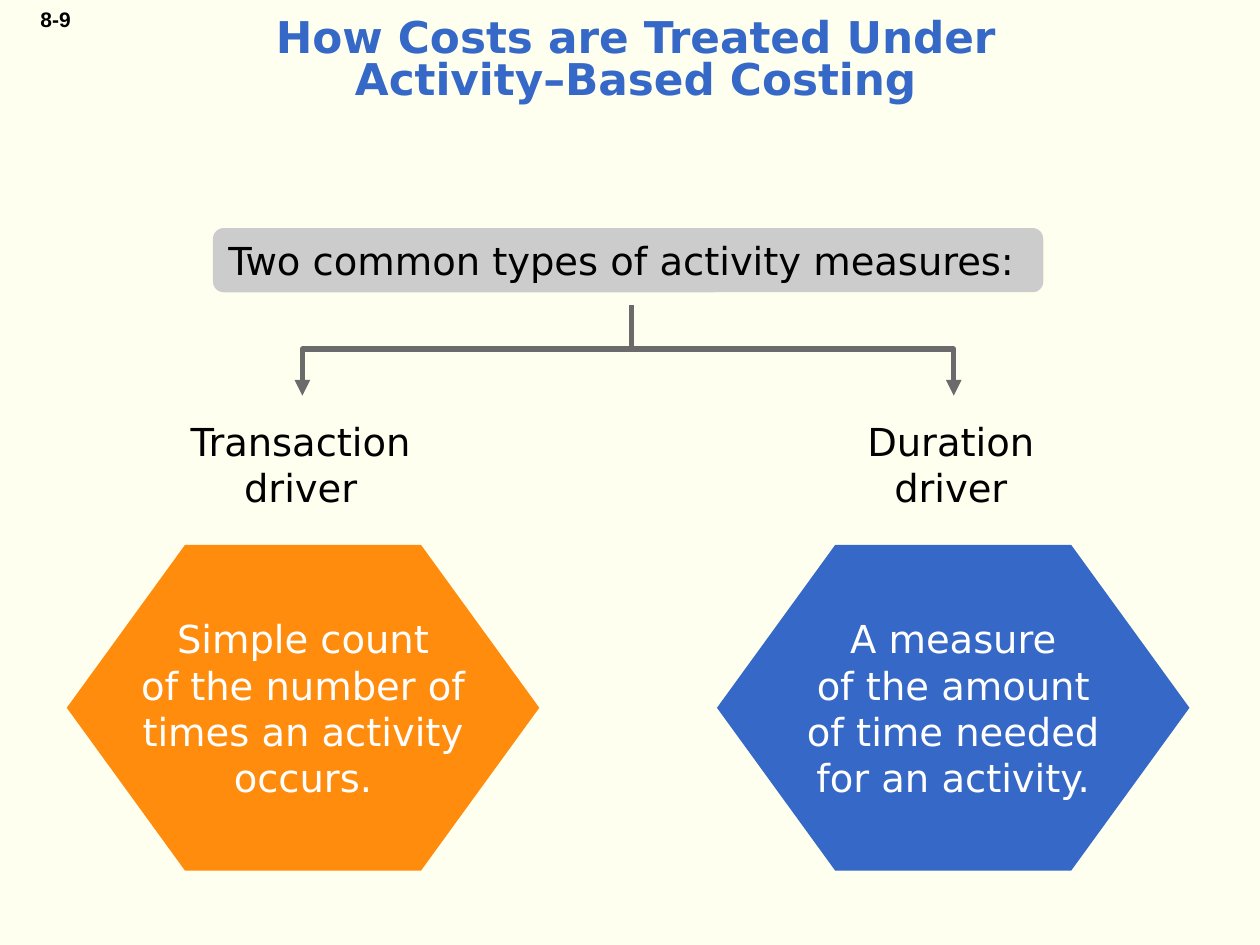
import pptx
import pptx.util
import pptx.dml.color
import pptx.enum.shapes
import pptx.enum.text
import pptx.oxml.ns
import lxml.etree

COLORS = {"page": "FFFFEF", "blue": "3568C7", "orange": "FF8C0D", "banner": "CCCCCC",
          "arrow": "6B6B6B", "ink": "000000", "white": "FFFFFF"}
SHAPE = pptx.enum.shapes.MSO_SHAPE
ALIGN = pptx.enum.text.PP_ALIGN
ANCHOR = pptx.enum.text.MSO_ANCHOR
FIT = pptx.enum.text.MSO_AUTO_SIZE
BODY = {"name": "DejaVu Sans", "size": pptx.util.Pt(22), "bold": False}
TITLE = {"name": "DejaVu Sans", "size": pptx.util.Pt(25), "bold": True}
NUMBER = {"name": "Arial", "size": pptx.util.Pt(12), "bold": True}


def rgb(name):
    """Return the named colour."""
    return pptx.dml.color.RGBColor.from_string(COLORS[name])


def emu(box):
    """Convert a box in inches to slide units."""
    return [pptx.util.Inches(v) for v in box]


def write(sp, text, color, font=BODY, align=ALIGN.CENTER, anchor=ANCHOR.TOP, wrap=False):
    """Write formatted text into a shape."""
    tf = sp.text_frame
    for key, value in {"auto_size": FIT.NONE, "word_wrap": wrap,
                       "vertical_anchor": anchor}.items():
        setattr(tf, key, value)
    p = tf.paragraphs[0]
    p.text, p.alignment = text, align
    for r in p.runs:
        for key, value in font.items():
            setattr(r.font, key, value)
        r.font.color.rgb = rgb(color)
    return p


def panel(shapes, kind, box, fill, adj):
    """Add a flat filled shape."""
    sp = shapes.add_shape(kind, *emu(box))
    sp.shadow.inherit = False
    sp.fill.solid()
    sp.fill.fore_color.rgb = rgb(fill)
    sp.line.fill.background()
    sp.adjustments[0] = adj
    return sp


def heading(s, box):
    """Place the title in its placeholder."""
    sp = s.shapes.title
    for key, value in zip(("left", "top", "width", "height"), emu(box)):
        setattr(sp, key, value)
    p = write(sp, "How Costs are Treated Under\nActivity–Based Costing", "blue",
              TITLE, anchor=ANCHOR.MIDDLE, wrap=True)
    p.line_spacing = 0.8


def page_number(s, box):
    """Place the page number."""
    write(s.shapes.add_textbox(*emu(box)), "8-9", "ink", NUMBER, ALIGN.RIGHT)


def banner(s, box):
    """Place the introductory banner."""
    sp = panel(s.shapes, SHAPE.ROUNDED_RECTANGLE, box, "banner", 0.167)
    write(sp, "Two common types of activity measures:", "ink", align=ALIGN.LEFT)


def driver(s, box, label, detail, fill):
    """Place a driver label above its hexagon."""
    x, y, w, h = box
    shapes = s.shapes.add_group_shape().shapes
    sp = panel(shapes, SHAPE.HEXAGON, (x, y + h * 0.29, w, h * 0.71), fill, 0.363)
    write(sp, detail, "white", anchor=ANCHOR.MIDDLE)
    sp = shapes.add_textbox(*emu((x + w * 0.23, y, w * 0.53, h * 0.23)))
    write(sp, label, "ink")


def branch(shapes, start, end):
    """Draw an elbow arrow that leaves downward and lands downward."""
    (x1, y1), (x2, y2) = start, end
    span, drop = abs(x2 - x1), y2 - y1
    left, top = (x1 + x2 - drop) / 2, (y1 + y2 - span) / 2
    corners = emu((left, top, left + drop, top + span))
    c = shapes.add_connector(pptx.enum.shapes.MSO_CONNECTOR.ELBOW, *corners)
    c.line.color.rgb, c.line.width = rgb("arrow"), pptx.util.Pt(3)
    qn = pptx.oxml.ns.qn
    spPr = c._element.spPr
    xfrm = spPr.find(qn("a:xfrm"))
    turn = {"rot": "5400000"} if x2 < x1 else {"rot": "16200000", "flipH": "1"}
    for key, value in turn.items():
        xfrm.set(key, value)
    guides = spPr.find(qn("a:prstGeom")).get_or_add_avLst()
    lxml.etree.SubElement(guides, qn("a:gd"), name="adj1", fmla="val 48600")
    lxml.etree.SubElement(spPr.find(qn("a:ln")), qn("a:tailEnd"), type="triangle")
    lxml.etree.SubElement(spPr, qn("a:effectLst"))


def fork(s, box, stem):
    """Draw both arrows from one stem to the sides of the box."""
    x, y, w, h = box
    shapes = s.shapes.add_group_shape().shapes
    for end in (x, x + w):
        branch(shapes, (stem, y), (end, y + h))


def main():
    """Build the slide."""
    prs = pptx.Presentation()
    prs.slide_width, prs.slide_height = emu((10, 7.5))
    s = prs.slides.add_slide(prs.slide_layouts[5])
    s.background.fill.solid()
    s.background.fill.fore_color.rgb = rgb("page")
    page_number(s, (0.11, 0, 0.55, 0.3))
    drivers = (
        ("Transaction\ndriver",
         "Simple count\nof the number of\ntimes an activity\noccurs.", "orange"),
        ("Duration\ndriver",
         "A measure\nof the amount\nof time needed\nfor an activity.", "blue"))
    for i, (label, detail, fill) in enumerate(drivers):
        driver(s, (0.53 + i * 5.16, 3.27, 3.75, 3.64), label, detail, fill)
    banner(s, (1.69, 1.81, 6.59, 0.51))
    fork(s, (2.4, 2.42, 5.17, 0.72), 5.01)
    heading(s, (0.17, 0.08, 9.75, 0.83))
    prs.save("out.pptx")


if __name__ == "__main__":
    main()
